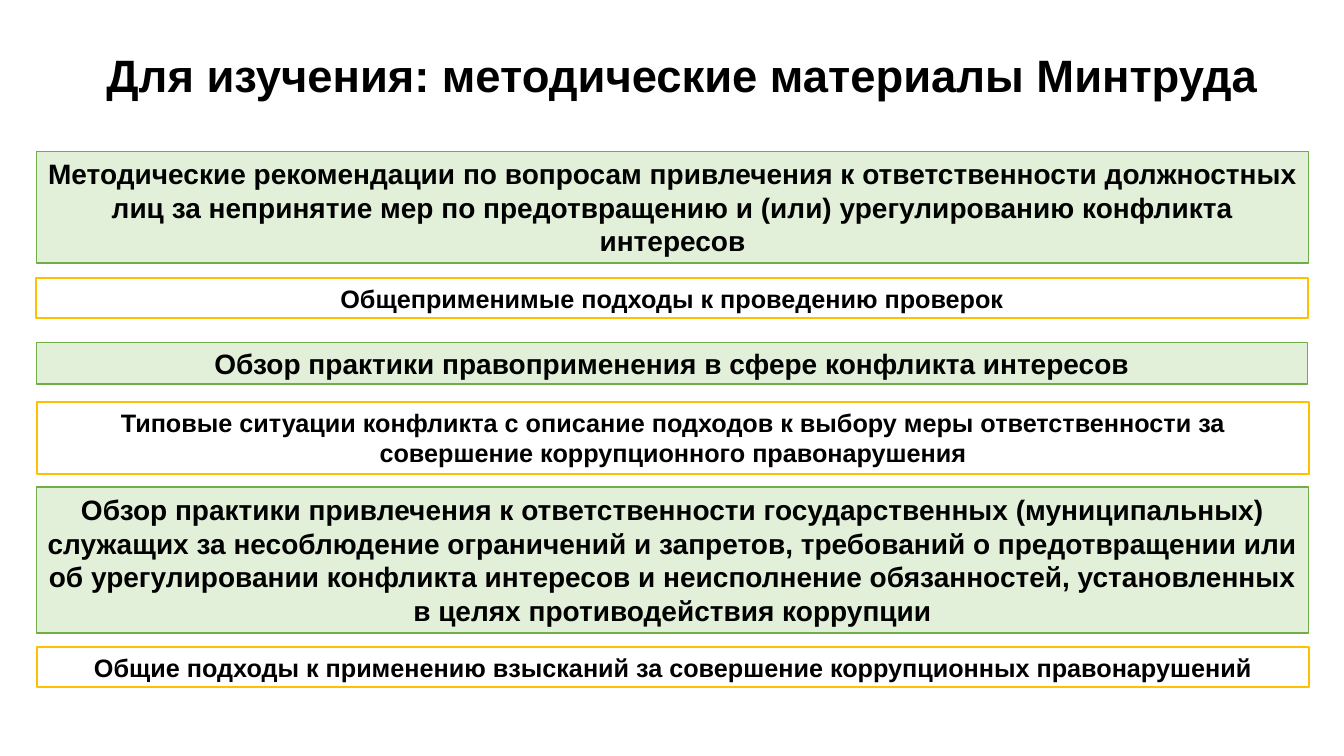
from pptx import Presentation
from pptx.dml.color import RGBColor
from pptx.enum.shapes import MSO_SHAPE as Shape
from pptx.enum.text import MSO_ANCHOR as Anchor, PP_ALIGN as Align
from pptx.util import Pt

PX = 9144  # 100 px to the inch
COLORS = {
    "black": "000000",
    "white": "FFFFFF",
    "pale_green": "E2F0D9",
    "green": "70AD47",
    "amber": "FFC000",
}


def color(name):
    return RGBColor.from_string(COLORS[name])


def write(box, text, *, size, anchor, spacing=1.0):
    frame = box.text_frame
    frame.word_wrap = True
    frame.vertical_anchor = anchor
    frame.margin_left = frame.margin_right = 10 * PX
    frame.margin_top = frame.margin_bottom = 5 * PX
    para = frame.paragraphs[0]
    para.alignment = Align.CENTER
    para.line_spacing = spacing
    span = para.add_run()
    span.text = text
    span.font.name = "Arial"
    span.font.size = Pt(size)
    span.font.bold = True
    span.font.color.rgb = color("black")


deck = Presentation()
deck.slide_width = 1333 * PX
deck.slide_height = 750 * PX
page = deck.slides.add_slide(deck.slide_layouts[6])

# Title
title = page.shapes.add_textbox(57 * PX, 28 * PX, 1239 * PX, 99 * PX)
write(title, "Для изучения: методические материалы Минтруда",
      size=32.4, anchor=Anchor.MIDDLE, spacing=0.9)

# Green bars name the documents, amber bars tell what they cover
STYLES = {
    "document": dict(fill="pale_green", line="green", weight=1,
                     size=20, anchor=Anchor.MIDDLE),
    "topic": dict(fill="white", line="amber", weight=1.5,
                  size=18, anchor=Anchor.TOP),
}
BARS = [  # style, left, top, width, height, text
    ("document", 36, 150, 1262, 111,
     "Методические рекомендации по вопросам привлечения к ответственности "
     "должностных лиц за непринятие мер по предотвращению и (или) "
     "урегулированию конфликта интересов"),
    ("topic", 36, 276, 1261, 40,
     "Общеприменимые подходы к проведению проверок"),
    ("document", 36, 340, 1261, 41,
     "Обзор практики правоприменения в сфере конфликта интересов"),
    ("topic", 37, 399, 1261, 71,
     "Типовые ситуации конфликта с описание подходов к выбору меры "
     "ответственности за совершение коррупционного правонарушения"),
    ("document", 36, 483, 1262, 145,
     "Обзор практики привлечения к ответственности государственных "
     "(муниципальных) служащих за несоблюдение ограничений и запретов, "
     "требований о предотвращении или об урегулировании конфликта интересов "
     "и неисполнение обязанностей, установленных в целях противодействия "
     "коррупции"),
    ("topic", 37, 642, 1261, 40,
     "Общие подходы к применению взысканий за совершение коррупционных "
     "правонарушений"),
]
for kind, left, top, width, height, text in BARS:
    style = STYLES[kind]
    bar = page.shapes.add_shape(Shape.RECTANGLE, left * PX, top * PX,
                                width * PX, height * PX)
    bar.shadow.inherit = False
    bar.fill.solid()
    bar.fill.fore_color.rgb = color(style["fill"])
    bar.line.color.rgb = color(style["line"])
    bar.line.width = Pt(style["weight"])
    write(bar, text, size=style["size"], anchor=style["anchor"])

deck.save("out.pptx")
